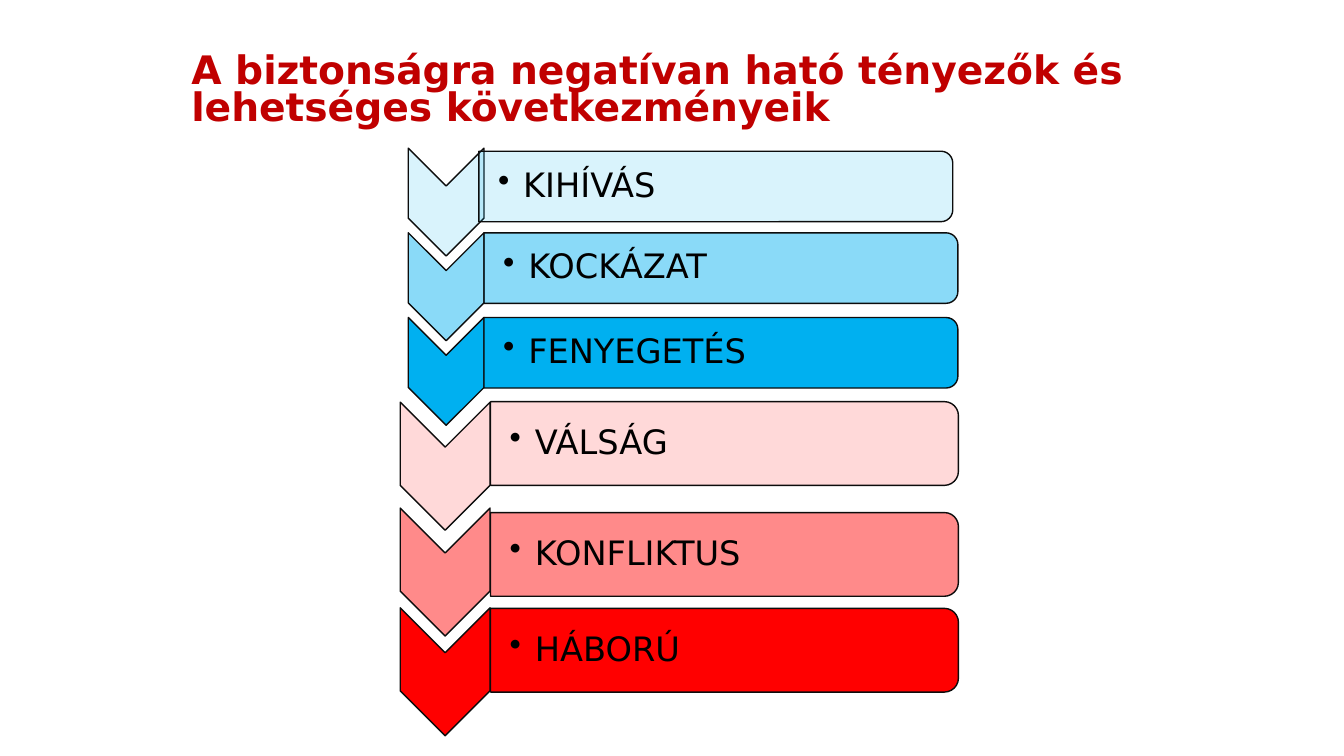
import pptx
import pptx.dml.color
import pptx.enum.shapes
import pptx.enum.text
import pptx.oxml.ns
import pptx.util
from lxml import etree

RGBColor = pptx.dml.color.RGBColor
Inches, Pt = pptx.util.Inches, pptx.util.Pt
SHAPE = pptx.enum.shapes.MSO_SHAPE
MIDDLE = pptx.enum.text.MSO_ANCHOR.MIDDLE

TITLE_RED = RGBColor(0xC0, 0x00, 0x00)
BLUE = RGBColor(0x00, 0xB0, 0xF0)
RED = RGBColor(0xFF, 0x00, 0x00)
OUTLINE = RGBColor(0x0C, 0x0C, 0x0C)
BLACK = RGBColor(0x00, 0x00, 0x00)


class EscalationSlide:
    """Holds the style and the slide; lengths are percent of slide width or height."""

    font = "DejaVu Sans"

    def __init__(self, deck):
        self.column = deck.slide_width / 100
        self.row = deck.slide_height / 100
        self.slide = deck.slides.add_slide(deck.slide_layouts[6])

    def box(self, left, top, width, height):
        return [round(left * self.column), round(top * self.row),
                round(width * self.column), round(height * self.row)]

    def format_text(self, paragraph, text, size, color, bold, spacing):
        paragraph.text = text
        paragraph.line_spacing = spacing
        font = paragraph.font
        font.name, font.size, font.bold = self.font, Pt(size), bold
        font.color.rgb = color

    def title(self, text, area):
        frame = self.slide.shapes.add_textbox(*self.box(*area)).text_frame
        frame.word_wrap = True
        frame.vertical_anchor = MIDDLE
        self.format_text(frame.paragraphs[0], text, 28, TITLE_RED, True, 0.8)

    def turned_shape(self, group, kind, area, color, opacity):
        """Add a shape turned by 90 degrees so that it covers the given area."""
        left, top, width, height = self.box(*area)
        shift = (width - height) // 2
        shape = group.shapes.add_shape(kind, left + shift, top - shift, height, width)
        shape.rotation = 90
        shape.shadow.inherit = False
        shape.fill.solid()
        shape.fill.fore_color.rgb = color
        if opacity < 100:
            tint = shape.fill._xPr.find(".//" + pptx.oxml.ns.qn("a:srgbClr"))
            etree.SubElement(tint, pptx.oxml.ns.qn("a:alpha"), val=str(opacity * 1000))
        shape.line.color.rgb = OUTLINE
        shape.line.width = Pt(1)

    def bullet(self, group, text, area):
        frame = group.shapes.add_textbox(*self.box(*area)).text_frame
        frame.word_wrap = True
        frame.vertical_anchor = MIDDLE
        frame.margin_left = Inches(0.19)
        frame.margin_top = frame.margin_right = frame.margin_bottom = Inches(0.02)
        paragraph = frame.paragraphs[0]
        properties = paragraph._p.get_or_add_pPr()
        properties.set("marL", str(Inches(0.25)))
        properties.set("indent", str(-Inches(0.25)))
        etree.SubElement(properties, pptx.oxml.ns.qn("a:buChar"), char="•")
        paragraph.level = 1
        self.format_text(paragraph, text, 24, BLACK, False, 0.9)

    def stage(self, group, text, color, opacity, chevron, bar):
        self.turned_shape(group, SHAPE.CHEVRON, chevron, color, opacity)
        self.turned_shape(group, SHAPE.ROUND_2_SAME_RECTANGLE, bar, color, opacity)
        left, top, width, height = bar
        self.bullet(group, text, (left, top + 0.05 * height, width, 0.9 * height))


def main():
    deck = pptx.Presentation()
    deck.slide_width, deck.slide_height = Inches(13.33), Inches(7.5)
    page = EscalationSlide(deck)

    page.title("A biztonságra negatívan ható tényezők és lehetséges következményeik",
               (13.5, 4.67, 74.12, 14.93))

    # Each family: colour, chevron left, width, height, bar width, bar height,
    # then its stages: label, chevron top, bar left, bar top
    families = [
        (BLUE, 30.38, 5.63, 14.27, 35.26, 9.33, [
            ("KIHÍVÁS", 19.6, 35.63, 20),
            ("KOCKÁZAT", 30.8, 36.01, 30.8),
            ("FENYEGETÉS", 42, 36.01, 42)]),
        (RED, 29.78, 6.68, 16.93, 34.81, 11.07, [
            ("VÁLSÁG", 53.2, 36.5, 53.13),
            ("KONFLIKTUS", 67.2, 36.5, 67.8),
            ("HÁBORÚ", 80.4, 36.5, 80.47)]),
    ]

    # The colour grows stronger down each family
    for color, left, width, height, bar_width, bar_height, stages in families:
        group = page.slide.shapes.add_group_shape()
        for opacity, (label, top, bar_left, bar_top) in zip((15, 46, 100), stages):
            page.stage(group, label, color, opacity, (left, top, width, height),
                       (bar_left, bar_top, bar_width, bar_height))

    deck.save("out.pptx")


if __name__ == "__main__":
    main()
